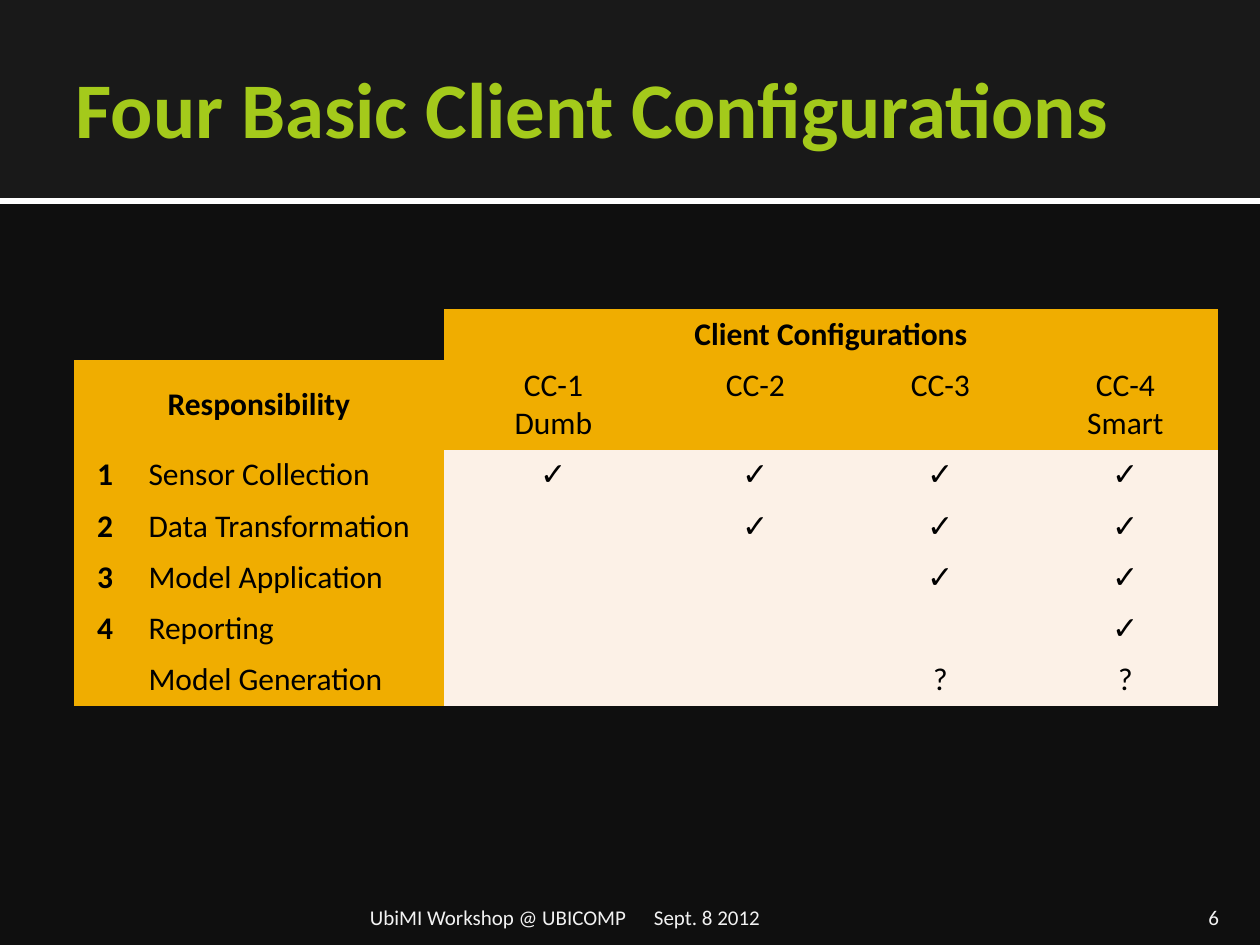
"""Builds the slide on the four basic client configurations."""
from lxml.etree import SubElement
from pptx import Presentation
from pptx.dml.color import RGBColor
from pptx.enum.shapes import MSO_SHAPE
from pptx.enum.text import MSO_ANCHOR, PP_ALIGN
from pptx.oxml.ns import qn
from pptx.util import Pt

EMU_PER_PIXEL = 914400 // 126
BLACK, GOLD, CREAM, NIGHT = "000000", "F0AD00", "FCF1E7", "0F0F0F"


def paint(target, color):
    target.solid()
    target.fore_color.rgb = RGBColor.from_string(color)


def write(paragraph, text, size, color, bold=False, align=PP_ALIGN.LEFT):
    paragraph.alignment = align
    for index, line in enumerate(text.split("\n")):
        if index:
            paragraph.add_line_break()
        run = paragraph.add_run()
        run.text = line
        run.font.name = "Calibri"
        run.font.size = Pt(size)
        run.font.bold = bold
        paint(run.font.fill, color)


deck = Presentation()
deck.slide_width = 1260 * EMU_PER_PIXEL
deck.slide_height = 945 * EMU_PER_PIXEL
slide = deck.slides.add_slide(deck.slide_layouts[5])
paint(slide.background.fill, NIGHT)

title = slide.shapes.title
for top, height, color in [(198, 6, "FFFFFF"), (0, 198, "191919")]:
    band = slide.shapes.add_shape(
        MSO_SHAPE.RECTANGLE, 0, top * EMU_PER_PIXEL, deck.slide_width, height * EMU_PER_PIXEL)
    band.shadow.inherit = False
    band.line.fill.background()
    paint(band.fill, color)
    title._element.addprevious(band._element)

title.left, title.top, title.width, title.height = [
    pixels * EMU_PER_PIXEL for pixels in (63, 21, 1134, 173)]
title.text_frame.margin_right = 6 * EMU_PER_PIXEL
title.text_frame.vertical_anchor = MSO_ANCHOR.MIDDLE
write(title.text_frame.paragraphs[0], "Four Basic Client Configurations", 45, "A4CA1B", True)

column_widths = [62, 308, 219, 185, 185, 185]
row_heights = [51, 89, 51, 51, 51, 51, 52]
responsibilities = [
    ("1", "Sensor Collection", "✓✓✓✓"),
    ("2", "Data Transformation", " ✓✓✓"),
    ("3", "Model Application", "  ✓✓"),
    ("4", "Reporting", "   ✓"),
    ("", "Model Generation", "  ??"),
]
cell_texts = [
    ["", "", "Client Configurations", "", "", ""],
    ["Responsibility", "", "CC-1\nDumb", "CC-2", "CC-3", "CC-4\nSmart"],
]
for number, name, marks in responsibilities:
    cell_texts.append([number, name] + [mark.strip() for mark in marks])

matrix = slide.shapes.add_table(
    len(row_heights), len(column_widths), 74 * EMU_PER_PIXEL, 309 * EMU_PER_PIXEL,
    sum(column_widths) * EMU_PER_PIXEL, sum(row_heights) * EMU_PER_PIXEL).table
matrix.first_row = matrix.horz_banding = False
matrix._tbl.tblPr.find(qn("a:tableStyleId")).text = "{2D5ABB26-0587-4C30-8999-92F81FD0307C}"
for column, width in zip(matrix.columns, column_widths):
    column.width = width * EMU_PER_PIXEL
for row, height in zip(matrix.rows, row_heights):
    row.height = height * EMU_PER_PIXEL
for row, first, last in [(0, 0, 1), (0, 2, 5), (1, 0, 1)]:
    matrix.cell(row, first).merge(matrix.cell(row, last))

for row, texts in enumerate(cell_texts):
    for column, text in enumerate(texts):
        cell = matrix.cell(row, column)
        paint(cell.fill, NIGHT if row == 0 and column < 2
              else CREAM if row > 1 and column > 1 else GOLD)
        if text:
            is_name = row > 1 and column == 1
            write(cell.text_frame.paragraphs[0], text, 18, BLACK, row == 0 or column == 0,
                  PP_ALIGN.LEFT if is_name else PP_ALIGN.CENTER)
matrix.cell(1, 0).vertical_anchor = MSO_ANCHOR.MIDDLE

for left, width, inset, text, align in [
    (1130, 101, 12, "6", PP_ALIGN.RIGHT),
    (364, 759, 6, "UbiMI Workshop @ UBICOMP\tSept. 8 2012", PP_ALIGN.LEFT),
]:
    footer = slide.shapes.add_textbox(
        left * EMU_PER_PIXEL, 892 * EMU_PER_PIXEL, width * EMU_PER_PIXEL, 38 * EMU_PER_PIXEL)
    frame = footer.text_frame
    frame.word_wrap = True
    frame.vertical_anchor = MSO_ANCHOR.BOTTOM
    frame.margin_left = frame.margin_right = inset * EMU_PER_PIXEL
    frame.margin_bottom = 0
    write(frame.paragraphs[0], text, 12, "F2F2F2", align=align)
    if "\t" in text:
        tab_list = SubElement(frame.paragraphs[0]._p.get_or_add_pPr(), qn("a:tabLst"))
        SubElement(tab_list, qn("a:tab"), pos=str(284 * EMU_PER_PIXEL), algn="l")

deck.save("out.pptx")
